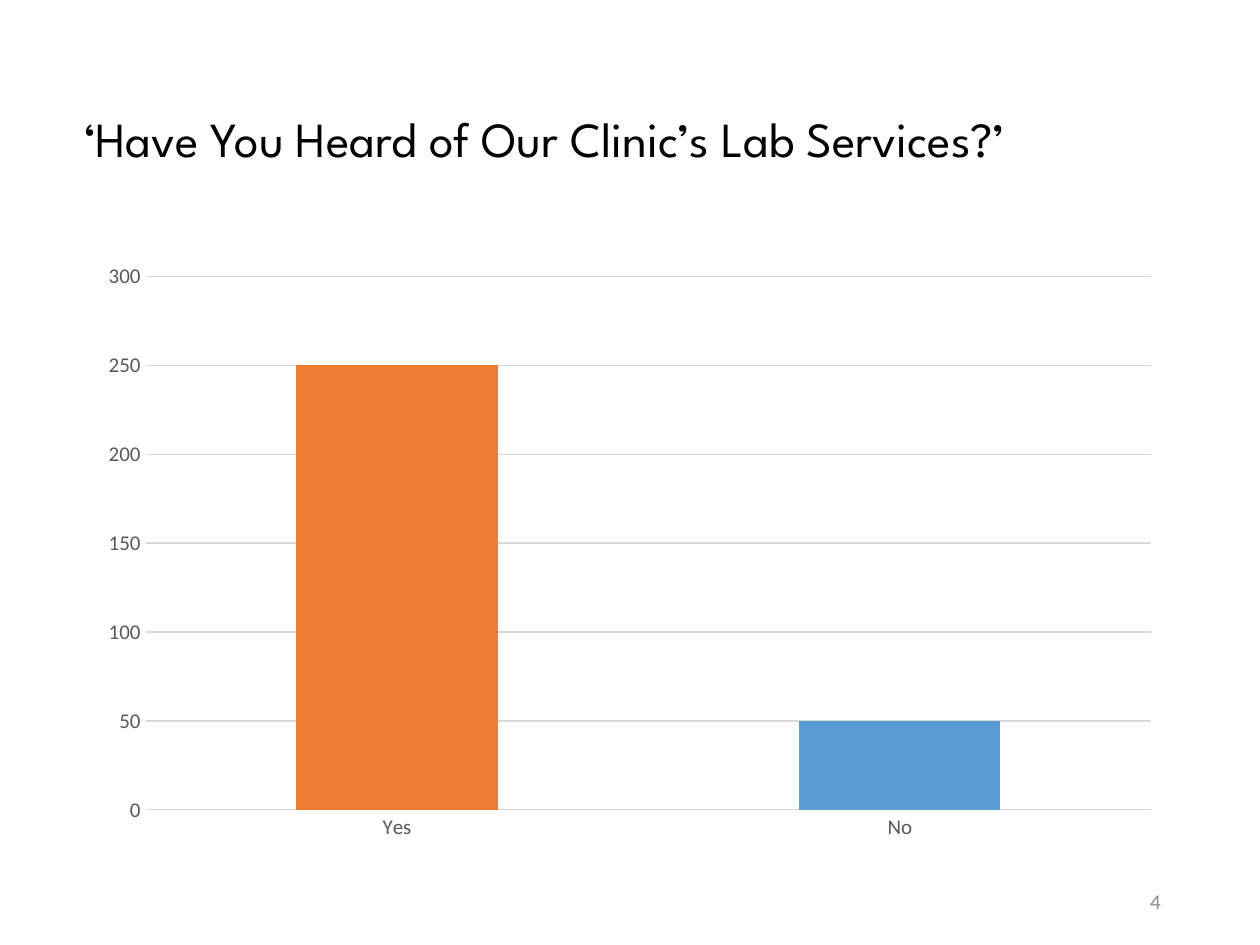
from pptx import Presentation
from pptx.chart.data import CategoryChartData
from pptx.dml.color import RGBColor
from pptx.enum.chart import XL_CHART_TYPE, XL_TICK_MARK
from pptx.enum.text import MSO_ANCHOR, PP_ALIGN
from pptx.util import Pt

BLACK = RGBColor(0x00, 0x00, 0x00)
LABEL_GRAY = RGBColor(0x59, 0x59, 0x59)
NUMBER_GRAY = RGBColor(0x8C, 0x8C, 0x8C)
GRID_GRAY = RGBColor(0xD9, 0xD9, 0xD9)
ORANGE = RGBColor(0xED, 0x7D, 0x31)
BLUE = RGBColor(0x5B, 0x9B, 0xD5)


def style_font(font, name, size, color):
    """Set the typeface, size and colour of a font."""
    font.name = name
    font.size = Pt(size)
    font.color.rgb = color


def style_line(line):
    """Give a chart line the thin light gray stroke."""
    line.color.rgb = GRID_GRAY
    line.width = Pt(0.75)


def write_line(shape, text, align, name, size, color):
    """Write one vertically centred line of text into a shape."""
    frame = shape.text_frame
    frame.word_wrap = True
    frame.vertical_anchor = MSO_ANCHOR.MIDDLE
    para = frame.paragraphs[0]
    para.alignment = align
    span = para.add_run()
    span.text = text
    style_font(span.font, name, size, color)
    return para


def add_title(page, left, top, width, height):
    """Place the survey question in the title placeholder."""
    title = page.shapes.title
    title.left, title.top = Pt(left), Pt(top)
    title.width, title.height = Pt(width), Pt(height)
    para = write_line(title, "‘Have You Heard of Our Clinic’s Lab Services?’",
                      PP_ALIGN.LEFT, "League Spartan", 28, BLACK)
    para.line_spacing = 0.9


def add_answer_chart(page, left, top, width, height):
    """Draw the yes and no answers as columns."""
    data = CategoryChartData()
    data.categories = ["Yes", "No"]
    data.add_series("Series 1", [250, 50])
    chart = page.shapes.add_chart(XL_CHART_TYPE.COLUMN_STACKED, Pt(left), Pt(top),
                                  Pt(width), Pt(height), data).chart
    chart.has_title = False
    chart.has_legend = False
    style_font(chart.font, "Calibri", 10, BLACK)

    for axis in (chart.category_axis, chart.value_axis):
        axis.major_tick_mark = XL_TICK_MARK.NONE
        axis.minor_tick_mark = XL_TICK_MARK.NONE
        style_font(axis.tick_labels.font, "Calibri", 12, LABEL_GRAY)
    style_line(chart.category_axis.format.line)
    values = chart.value_axis
    values.minimum_scale, values.maximum_scale, values.major_unit = 0, 300, 50
    values.format.line.fill.background()
    values.has_major_gridlines = True
    style_line(values.major_gridlines.format.line)

    plot = chart.plots[0]
    plot.vary_by_categories = False
    plot.gap_width = 150
    plot.overlap = 100
    answers = plot.series[0]
    for part, color in ((answers, BLUE), (answers.points[0], ORANGE)):
        part.format.fill.solid()
        part.format.fill.fore_color.rgb = color


def add_page_number(page, left, top, width, height):
    """Place the page number at the right of its box."""
    box = page.shapes.add_textbox(Pt(left), Pt(top), Pt(width), Pt(height))
    write_line(box, "4", PP_ALIGN.RIGHT, "Calibri", 12, NUMBER_GRAY)


def main():
    """Build and save the survey slide."""
    deck = Presentation()
    deck.slide_width, deck.slide_height = Pt(720), Pt(540)
    page = deck.slides.add_slide(deck.slide_layouts[5])
    add_title(page, 41, 28.8, 647.3, 104.4)
    add_answer_chart(page, 49.7, 144, 620.6, 342.7)
    add_page_number(page, 508.3, 500.4, 162, 28.8)
    deck.save("out.pptx")


if __name__ == "__main__":
    main()
